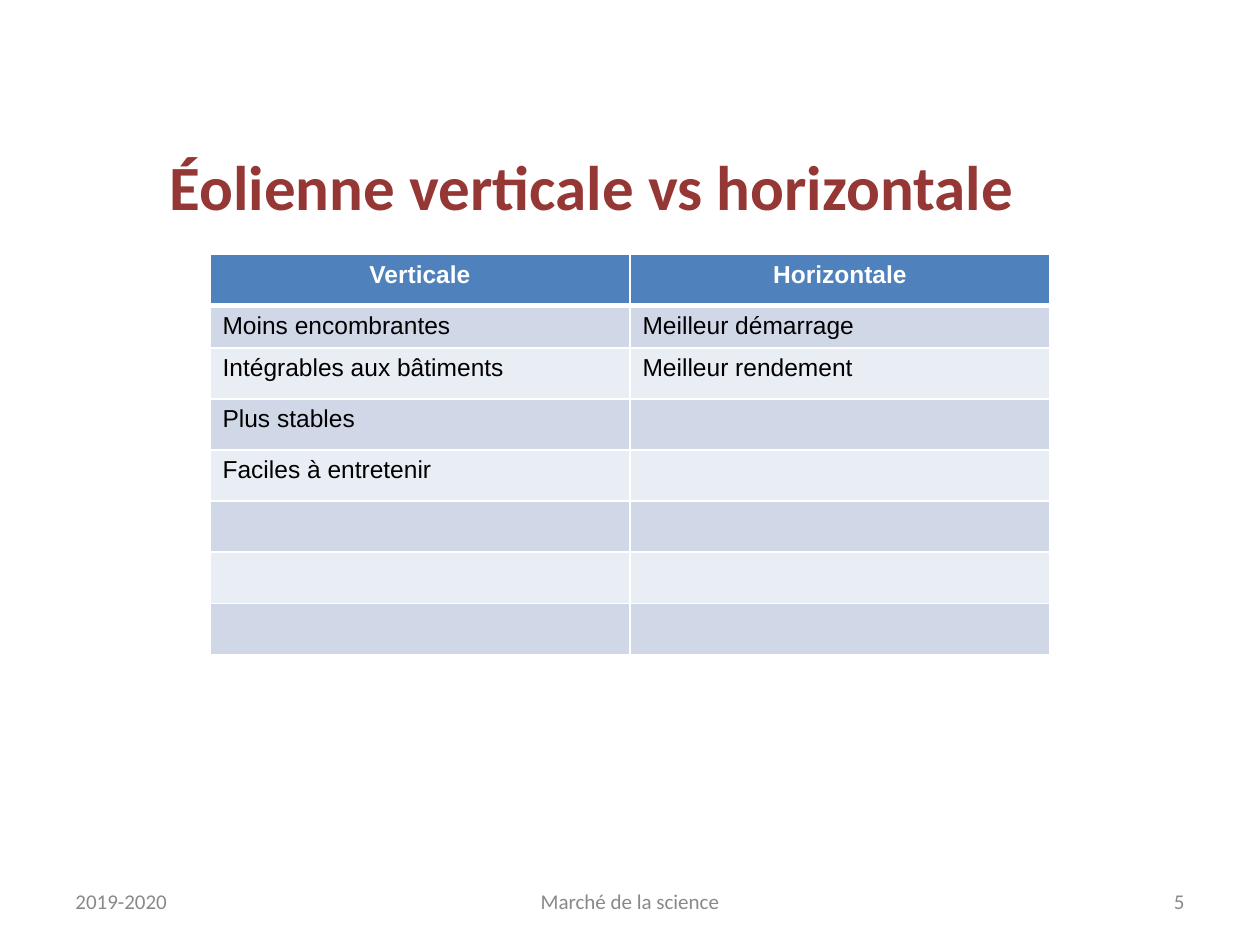
"""Build a slide comparing vertical and horizontal wind turbines."""
from pptx import Presentation
from pptx.dml.color import RGBColor
from pptx.enum.text import MSO_ANCHOR, PP_ALIGN
from pptx.oxml import parse_xml
from pptx.oxml.ns import nsdecls
from pptx.util import Pt


def rgb(h):
    return RGBColor.from_string(h)


def style(p, font, size, color, bold=False, align=PP_ALIGN.LEFT):
    p.alignment = align
    p.font.name = font
    p.font.size = Pt(size)
    p.font.bold = bold
    p.font.color.rgb = rgb(color)


prs = Presentation()
prs.slide_width, prs.slide_height = Pt(720), Pt(540)
s = prs.slides.add_slide(prs.slide_layouts[6])

texts = [
    ("2019-2020", 36, 500.5, 168, 28.75, 12, "898989", False, PP_ALIGN.LEFT, MSO_ANCHOR.MIDDLE),
    ("Marché de la science", 246, 500.5, 228, 28.75, 12, "898989", False, PP_ALIGN.CENTER, MSO_ANCHOR.MIDDLE),
    ("5", 516, 500.5, 168, 28.75, 12, "898989", False, PP_ALIGN.RIGHT, MSO_ANCHOR.MIDDLE),
    ("Éolienne verticale vs horizontale", 90, 81, 594, 64, 36, "953734", True, PP_ALIGN.LEFT, MSO_ANCHOR.TOP),
]
for text, x, y, w, h, size, color, bold, align, anchor in texts:
    tf = s.shapes.add_textbox(Pt(x), Pt(y), Pt(w), Pt(h)).text_frame
    tf.word_wrap = True
    tf.vertical_anchor = anchor
    tf.text = text
    style(tf.paragraphs[0], "Calibri", size, color, bold, align)

rows = [
    ("Verticale", "Horizontale"),
    ("Moins encombrantes", "Meilleur démarrage"),
    ("Intégrables aux bâtiments", "Meilleur rendement"),
    ("Plus stables", ""),
    ("Faciles à entretenir", ""),
    ("", ""),
    ("", ""),
    ("", ""),
]
tbl = s.shapes.add_table(len(rows), 2, Pt(120), Pt(145.5), Pt(480), Pt(228)).table
for i, row in enumerate(rows):
    head = i == 0
    tbl.rows[i].height = Pt(19.5 if i == 1 else 29.2)
    for j, text in enumerate(row):
        cell = tbl.cell(i, j)
        cell.text = text
        style(cell.text_frame.paragraphs[0], "Arial", 14, "FFFFFF" if head else "000000",
              head, PP_ALIGN.CENTER if head else PP_ALIGN.LEFT)
        tcPr = cell._tc.get_or_add_tcPr()
        for side in "LRTB":
            thick = (head and side == "B") or (i == 1 and side == "T")
            tcPr.append(parse_xml(
                f'<a:ln{side} {nsdecls("a")} w="{Pt(3 if thick else 1)}"><a:solidFill>'
                f'<a:srgbClr val="FFFFFF"/></a:solidFill></a:ln{side}>'))
        cell.fill.solid()
        cell.fill.fore_color.rgb = rgb("4F81BD" if head else "D0D8E8" if i % 2 else "E9EDF4")

prs.save("out.pptx")
